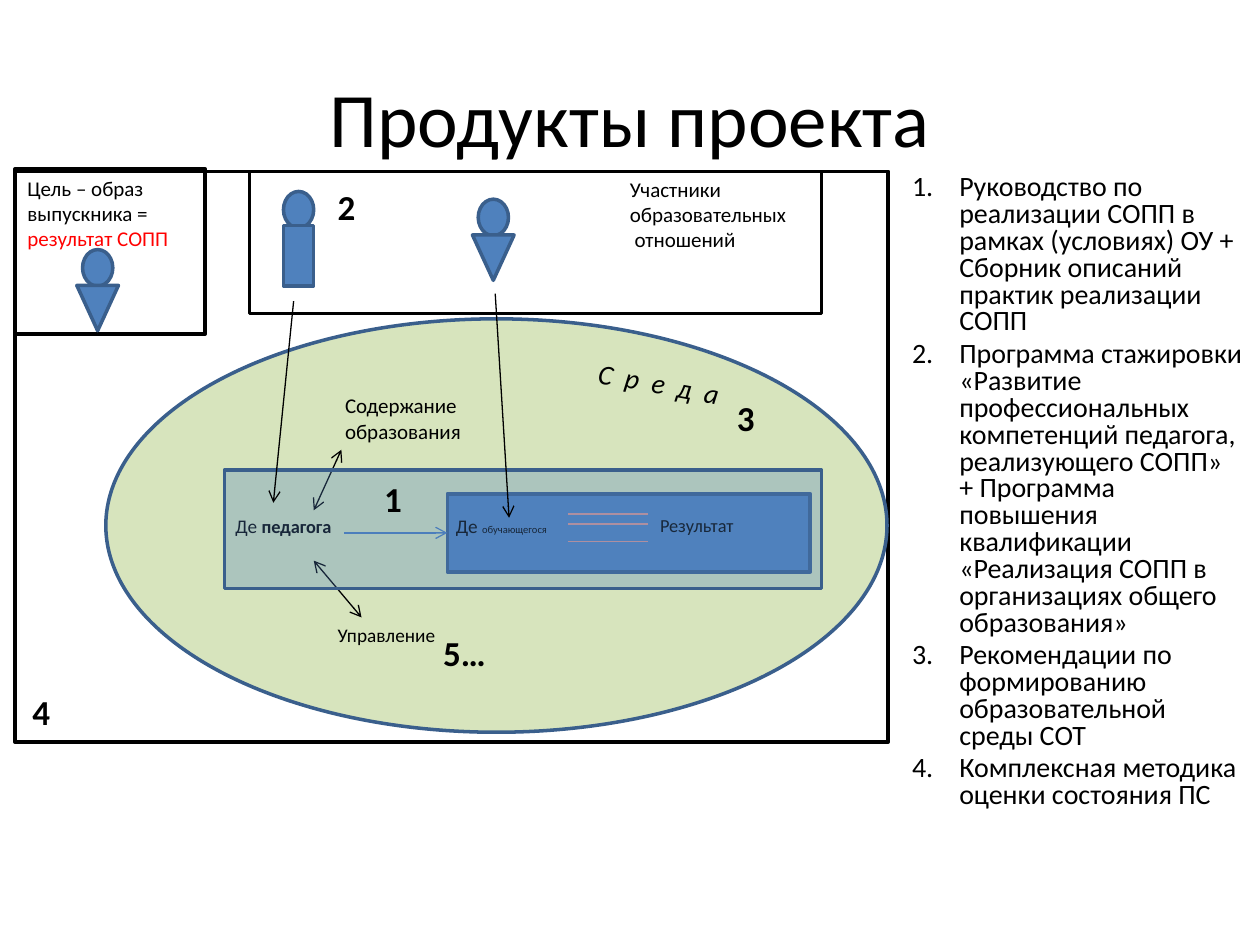
from lxml import etree
from pptx import Presentation, util as u
from pptx.dml import color
from pptx.enum import shapes, text
from pptx.oxml import ns

Pt = u.Pt
HUE = dict(ink="000000", red="FF0000", blue="4F81BD", edge="3A5F8C",
           green="D7E4BD", white="FFFFFF", flow="4B7EBC", rose="D99694")
KIND = shapes.MSO_SHAPE
TOP, MID = text.MSO_ANCHOR.TOP, text.MSO_ANCHOR.MIDDLE
LEFT, CENTER, JUST = (text.PP_ALIGN.LEFT, text.PP_ALIGN.CENTER,
                      text.PP_ALIGN.JUSTIFY)
GROW = text.MSO_AUTO_SIZE.SHAPE_TO_FIT_TEXT
FIXED = text.MSO_AUTO_SIZE.NONE


def rgb(name):
    return color.RGBColor.from_string(HUE[name])


def sub(node, tag, **attrs):
    return etree.SubElement(node, ns.qn(tag), **attrs)


def apply(thing, values):
    for name, value in values.items():
        setattr(thing, name, value)


def spot(box, x, y, w, h):
    """Turn a place inside a box into a place on the slide."""
    return Pt(box[0] + x), Pt(box[1] + y), Pt(w), Pt(h)


def write(shape, paras, size, wrap=True, fit=FIXED, anchor=TOP, align=LEFT):
    """Each paragraph is a list of (words, font values, hue) runs."""
    frame = shape.text_frame
    apply(frame, dict(word_wrap=wrap, auto_size=fit, vertical_anchor=anchor))
    for i, runs in enumerate(paras):
        para = frame.paragraphs[0] if i == 0 else frame.add_paragraph()
        para.alignment = align
        for words, font, hue in runs:
            run = para.add_run()
            run.text = words
            apply(run.font, dict(name="Calibri", size=Pt(size)) | font)
            run.font.color.rgb = rgb(hue)
    return frame


def plain(*lines):
    return [[(line, {}, "ink")] for line in lines]


def label(slide, box, place, paras, size, **style):
    shape = slide.shapes.add_textbox(*spot(box, *place))
    write(shape, paras, size, **style)
    return shape


def block(slide, box, place, kind=KIND.RECTANGLE, fill="blue", edge="edge"):
    shape = slide.shapes.add_shape(kind, *spot(box, *place))
    shape.shadow.inherit = False
    if fill:
        shape.fill.solid()
        shape.fill.fore_color.rgb = rgb(fill)
    else:
        shape.fill.background()
    shape.line.color.rgb = rgb(edge)
    shape.line.width = Pt(2)
    return shape


def link(slide, box, start, end, hue="ink", ends=("tailEnd",)):
    points = [Pt(o + p) for o, p in zip(box[:2] * 2, start + end)]
    line = slide.shapes.add_connector(shapes.MSO_CONNECTOR.STRAIGHT, *points)
    line.line.color.rgb = rgb(hue)
    line.line.width = Pt(0.75)
    stroke = line.line._get_or_add_ln()
    for end_name in ends:
        sub(stroke, "a:" + end_name, type="arrow")
    sub(line._element.spPr, "a:effectLst")
    return line


def pupil(slide, box, x, y):
    block(slide, box, (x + 3.3, y, 17.3, 20.9), KIND.OVAL)
    block(slide, box, (x, y + 20.5, 23.8, 25.9), KIND.FLOWCHART_MERGE)


def tutor(slide, box, x, y):
    block(slide, box, (x, y, 17.3, 20.9), KIND.OVAL)
    block(slide, box, (x, y + 19.4, 17.3, 34.6))


def title(slide, box):
    label(slide, box, (0, 0, *box[2:]), plain("Продукты проекта"), 44,
          anchor=MID, align=CENTER)


def goal(slide, box):
    frame = block(slide, box, (0, 0, *box[2:]), fill="white", edge="ink")
    write(frame, [[("Цель – образ выпускника = ", {}, "ink"),
                   ("результат СОПП", {}, "red")]], 12)
    pupil(slide, box, 35.3, 46.1)


def setting(slide, box):
    # Outer frame and the oval environment
    block(slide, box, (0, 0, *box[2:]), fill=None, edge="ink")
    block(slide, box, (51.9, 84.3, 446.4, 236.2), KIND.OVAL, "green")
    # Words around the lesson
    label(slide, box, (181.5, 123.1, 90.7, 41.8),
          plain("Содержание образования"), 12, align=JUST)
    label(slide, box, (177.2, 254.9, 81.4, 21.6),
          plain("Управление"), 11, align=JUST)
    mood = label(slide, box, (326.2, 110.2, 110.2, 22.3),
                 [[("С р е д а", dict(italic=True), "ink")]], 16, align=JUST)
    mood.rotation = 10.3
    run = mood.text_frame.paragraphs[0].runs[0]
    run.font._element.set("spc", "180")
    # Two-way arrows
    both = ("headEnd", "tailEnd")
    link(slide, box, (186.5, 159.1), (170.7, 193.7), ends=both)
    link(slide, box, (170.7, 222.5), (198, 254.9), ends=both)


def lesson(slide, box):
    # Teacher's work leads to the learner's work
    label(slide, box, (-0.8, 21.6, 69.8, 38.2),
          [[("Де ", {}, "ink"),
            ("педагога", dict(size=Pt(10.5), bold=True), "ink")]],
          11, align=JUST)
    inner = block(slide, box, (127.4, 13.6, 207.4, 44.6))
    step = link(slide, box, (68.4, 35.9), (127.4, 35.9), "flow")
    step.end_connect(inner, 1)
    label(slide, box, (125.2, 21.6, 80.6, 35.3),
          [[("Де ", {}, "ink"), ("обучающегося", dict(size=Pt(6)), "ink")]],
          11, align=JUST)
    label(slide, box, (241.9, 21.6, 91.4, 18.7),
          plain("Результат"), 10.5, align=JUST)
    for y in (25.2, 30.9, 41):
        link(slide, box, (196.5, y), (241.9, y), "rose", ())
    # Clear cover over the whole lesson
    cover = block(slide, box, (0, 0, *box[2:]))
    tint = cover.fill._xPr.find(ns.qn("a:solidFill"))[0]
    sub(tint, "a:alpha", val="31000")


def people(slide, box):
    link(slide, box, (25.2, 74.2), (13.6, 189.4))
    link(slide, box, (140.4, 69.9), (148.3, 198))
    pupil(slide, box, 127.4, 15.9)
    tutor(slide, box, 19.4, 11.5)
    block(slide, box, (0, 0, *box[2:]), fill=None, edge="ink")
    label(slide, box, (210.2, -0.7, 126, 51.1),
          plain("Участники образовательных", " отношений"), 12, fit=GROW)


def products(slide, box):
    items = plain(
        "Руководство по реализации СОПП в рамках (условиях) ОУ + Сборник "
        "описаний практик реализации СОПП",
        "Программа стажировки «Развитие профессиональных компетенций "
        "педагога, реализующего СОПП» + Программа повышения квалификации "
        "«Реализация СОПП в организациях общего образования»",
        "Рекомендации по формированию образовательной среды СОТ",
        "Комплексная методика оценки состояния ПС")
    shape = label(slide, box, (0, 0, *box[2:]), items, 16, fit=GROW)
    for para in shape.text_frame.paragraphs:
        apply(para, dict(line_spacing=0.8, space_before=Pt(3.2)))
        props = para._p.get_or_add_pPr()
        props.set("marL", str(Pt(27)))
        props.set("indent", str(Pt(-27)))
        sub(props, "a:buFont", typeface="+mj-lt")
        sub(props, "a:buAutoNum", type="arabicPeriod")


def marks(slide, box):
    for words, x, y, w in (("1", 203.8, 171.4, 24.5), ("2", 177.2, 4.3, 24.5),
                           ("3", 405.4, 125.3, 24.5), ("4", 2.9, 293, 24.5),
                           ("5…", 237.6, 259.2, 38.9)):
        label(slide, box, (x, y, w, 31.7),
              [[(words, dict(bold=True), "ink")]], 20, wrap=False, fit=GROW)


def main():
    deck = Presentation()
    apply(deck, dict(slide_width=Pt(720), slide_height=Pt(540)))
    slide = deck.slides.add_slide(deck.slide_layouts[6])
    scheme = (8.6, 97.9, 499, 326.2)
    for draw, box in ((title, (36, 21.6, 648, 90)),
                      (goal, (8.6, 96.5, 108.7, 94.3)),
                      (setting, scheme),
                      (lesson, (128.2, 268.6, 341.3, 67.7)),
                      (people, (142.6, 97.9, 326.9, 81.4)),
                      (products, (514.1, 96.5, 203, 397.4)),
                      (marks, scheme)):
        draw(slide, box)
    deck.save("out.pptx")


if __name__ == "__main__":
    main()
